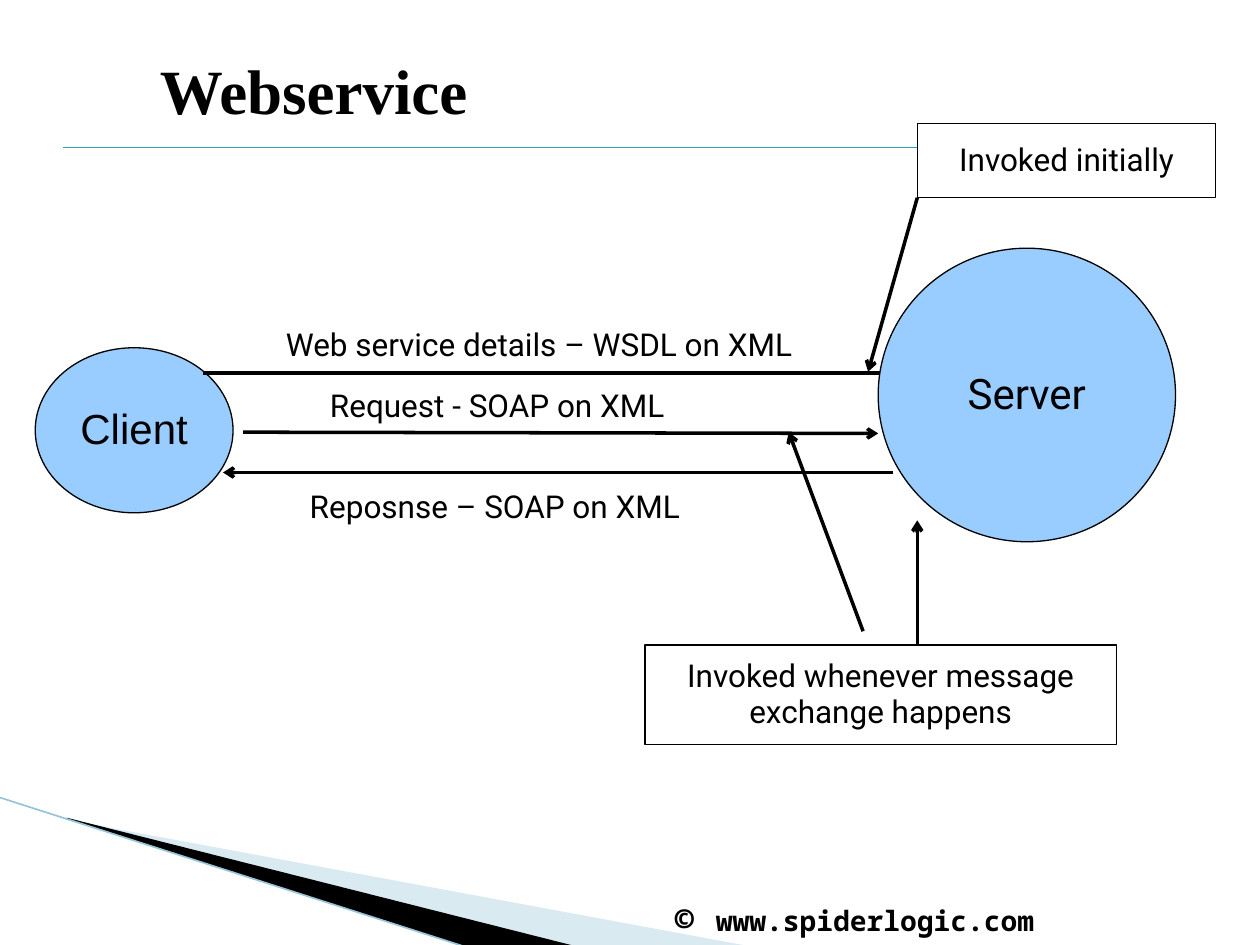
from lxml import etree
from pptx import Presentation, util as u
from pptx.dml.color import RGBColor
from pptx.enum import shapes, text
from pptx.oxml.ns import qn

HUE = {"ink": "000000", "paper": "FFFFFF", "node": "99CCFF",
       "rule": "2DA2BF", "pale": "A0CBDC", "edge": "97C5D8"}
OVAL = shapes.MSO_SHAPE.OVAL
RECT = shapes.MSO_SHAPE.RECTANGLE
LEFT, MID = text.PP_ALIGN.LEFT, text.PP_ALIGN.CENTER


def rgb(name):
    return RGBColor.from_string(HUE[name])


def write(shape, words, size=18, face="Roboto", bold=False, align=LEFT,
          anchor=text.MSO_ANCHOR.MIDDLE, space=None):
    """Fill a shape with text, one paragraph per line; return the last one."""
    frame = shape.text_frame
    frame.word_wrap = True
    frame.vertical_anchor = anchor
    for i, line in enumerate(words.split("\n")):
        para = frame.add_paragraph() if i else frame.paragraphs[0]
        para.alignment = align
        para.line_spacing = space
        font = add_run(para, line, size).font
        font.name, font.bold = face, bold
    return para


def add_run(para, words, size):
    run = para.add_run()
    run.text = words
    run.font.size = u.Pt(size)
    run.font.color.rgb = rgb("ink")
    return run


def label(slide, box, words, **style):
    area = slide.shapes.add_textbox(*map(u.Inches, box))
    return write(area, words, **style)


def link(slide, start, end, hue="ink", width=0, arrow=False):
    ends = map(u.Inches, (*start, *end))
    line = slide.shapes.add_connector(shapes.MSO_CONNECTOR.STRAIGHT, *ends)
    line.line.color.rgb = rgb(hue)
    line.line.width = u.Pt(width)
    if arrow:
        etree.SubElement(line.line._get_or_add_ln(), qn("a:tailEnd"), type="arrow")
    etree.SubElement(line._element.spPr, qn("a:effectLst"))


def node(slide, kind, box, words, hue, **style):
    shape = slide.shapes.add_shape(kind, *map(u.Inches, box))
    shape.shadow.inherit = False
    shape.fill.solid()
    shape.fill.fore_color.rgb = rgb(hue)
    shape.line.color.rgb = rgb("ink")
    shape.line.width = u.Pt(0)
    write(shape, words, align=MID, space=0.93, **style)


def wedge(slide, points, hue, alpha=None):
    first, *rest = [tuple(map(u.Inches, p)) for p in points]
    pen = slide.shapes.build_freeform(*first)
    pen.add_line_segments(rest)
    shape = pen.convert_to_shape()
    shape.shadow.inherit = False
    shape.fill.solid()
    shape.fill.fore_color.rgb = rgb(hue)
    shape.line.fill.background()
    if alpha:
        tint = shape._element.spPr.find(".//" + qn("a:srgbClr"))
        etree.SubElement(tint, qn("a:alpha"), val=str(alpha * 1000))


def swoosh(slide, x, y):
    """Corner wedges, from their top left point."""
    def at(*points):
        return [(x + a, y + b) for a, b in points]

    wedge(slide, at((0.55, 0.18), (5.95, 1.18), (4.56, 1.18), (0.55, 0.17)),
          "pale", alpha=40)
    wedge(slide, at((0.53, 0.16), (4.57, 1.18), (3.72, 1.19), (0.54, 0.17)), "ink")
    link(slide, *at((0, 0), (3.71, 1.19)), hue="edge", width=0.95)


def head(slide, x, y, w, h):
    """Title with a rule below."""
    label(slide, (x + 0.67, y, w - 0.59, h), "Webservice",
          size=36, face="Times New Roman", bold=True)
    low = y + h + 0.09
    link(slide, (x, low), (x + w, low), hue="rule", width=1)


def foot(slide, x, y, w, h):
    """Copyright line."""
    para = label(slide, (x, y, w, h), "© ", size=20, face="Noto Sans Mono",
                 bold=True, anchor=text.MSO_ANCHOR.BOTTOM)
    font = add_run(para, "www.spiderlogic.com", 16).font
    font.name, font.bold = "Noto Sans Mono", True


def flow(slide, x, y):
    """Client, server, their messages and the notes."""
    def box(a, b, w, h):
        return x + a, y + b, w, h

    def arrow(a, b, c, d):
        link(slide, (x + a, y + b), (x + c, y + d), arrow=True)

    node(slide, OVAL, box(0, 1.78, 1.57, 1.31), "Client", "node",
         size=24, face="Arial")

    # Messages
    for ends in ((1.33, 1.98, 7.24, 1.98), (1.65, 2.45, 6.69, 2.46),
                 (6.81, 2.77, 1.49, 2.77)):
        arrow(*ends)
    for a, b, words in ((1.89, 1.58, "Web service details – WSDL on XML"),
                        (2.24, 2.06, "Request - SOAP on XML"),
                        (2.08, 2.86, "Reposnse – SOAP on XML")):
        label(slide, box(a, b, 4.72, 0.39), words, space=0.93,
              anchor=text.MSO_ANCHOR.TOP)

    # Notes and their pointers
    node(slide, RECT, box(7, 0, 2.37, 0.59), "Invoked initially", "paper")
    arrow(7, 0.59, 6.61, 1.97)
    node(slide, RECT, box(4.84, 4.14, 3.74, 0.79),
         "Invoked whenever message\nexchange happens", "paper")
    arrow(6.57, 4.03, 5.98, 2.45)
    arrow(7, 4.14, 7, 3.15)

    # The server covers the end of the first message
    node(slide, OVAL, box(6.69, 0.99, 2.36, 2.33), "Server", "node", size=24)


def main():
    deck = Presentation()
    deck.slide_width, deck.slide_height = u.Inches(10), u.Inches(7.5)
    slide = deck.slides.add_slide(deck.slide_layouts[6])
    swoosh(slide, 0, 6.33)
    foot(slide, 5.25, 6.92, 3.4, 0.58)
    head(slide, 0.5, 0.33, 8.92, 0.75)
    flow(slide, 0.28, 0.98)
    deck.save("out.pptx")


if __name__ == "__main__":
    main()
